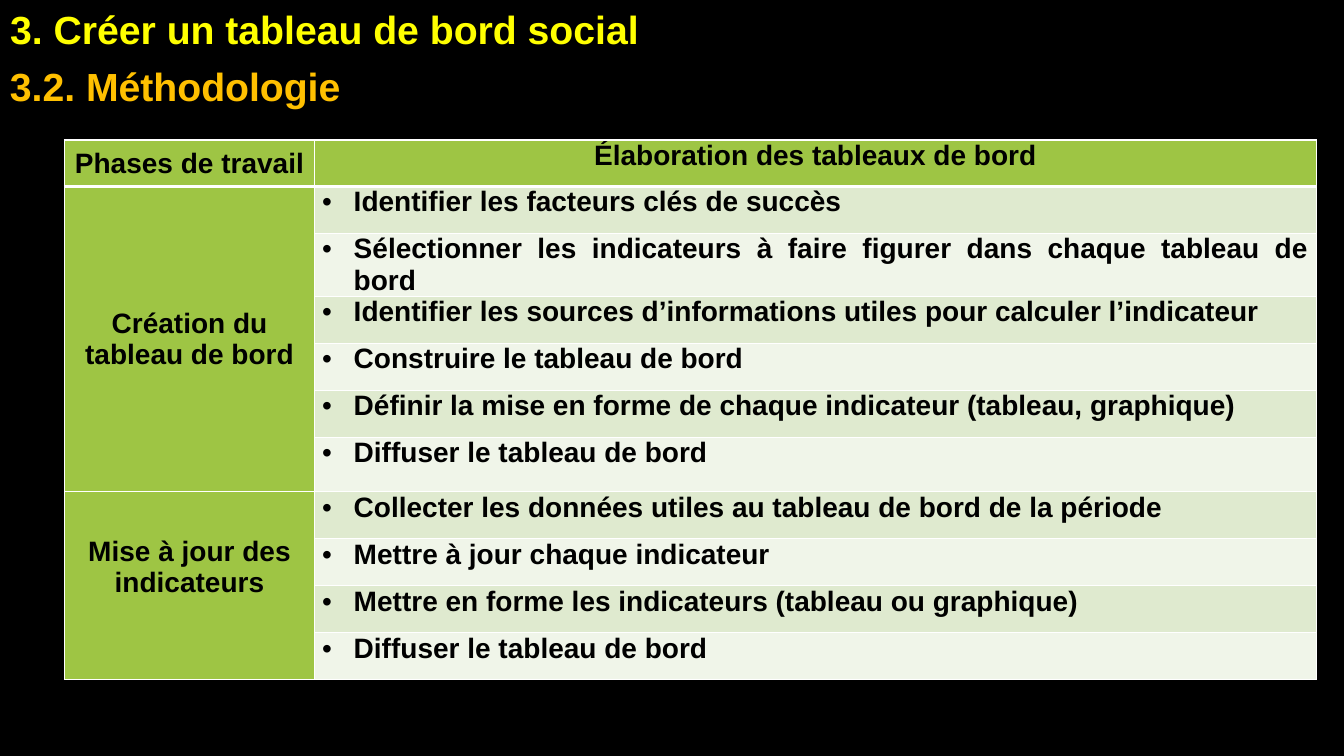
from lxml.etree import SubElement
from pptx import Presentation
from pptx.dml.color import RGBColor
from pptx.enum.text import MSO_ANCHOR as Anchor, MSO_AUTO_SIZE as AutoSize, PP_ALIGN as Align
from pptx.oxml.ns import qn
from pptx.util import Pt

BLACK, WHITE, YELLOW, ORANGE = "000000", "FFFFFF", "FFFF00", "FFC000"
GREEN, BANDS = "9EC544", ("DFEACF", "F0F5E9")
HEADINGS = ("Phases de travail", "Élaboration des tableaux de bord")
PHASES = (
    ("Création du tableau de bord", 0, (
        "Identifier les facteurs clés de succès",
        "Sélectionner les indicateurs à faire figurer dans chaque tableau de bord",
        "Identifier les sources d’informations utiles pour calculer l’indicateur",
        "Construire le tableau de bord",
        "Définir la mise en forme de chaque indicateur (tableau, graphique)",
        "Diffuser le tableau de bord",
    )),
    ("Mise à jour des indicateurs", 27, (
        "Collecter les données utiles au tableau de bord de la période",
        "Mettre à jour chaque indicateur",
        "Mettre en forme les indicateurs (tableau ou graphique)",
        "Diffuser le tableau de bord",
    )),
)


def paint(fill, color):
    fill.solid()
    fill.fore_color.rgb = RGBColor.from_string(color)


def write(frame, text, size=20, color=BLACK, align=Align.LEFT, spacing=0, bullet=False):
    frame.text = text
    line = frame.paragraphs[0]
    line.alignment = align
    line.space_before = line.space_after = Pt(spacing)
    font = line.runs[0].font
    font.name, font.size, font.bold = "Arial", Pt(size), True
    paint(font.fill, color)
    if bullet:
        properties = line._p.get_or_add_pPr()
        properties.set("marL", str(Pt(22.5)))
        properties.set("indent", str(Pt(-22.5)))
        SubElement(properties, qn("a:buFont"), typeface="Arial")
        SubElement(properties, qn("a:buChar"), char="•")


class Board:
    """Dark slide with headings and a green table of work phases."""

    def __init__(self, deck):
        self.slide = deck.slides.add_slide(deck.slide_layouts[5])
        paint(self.slide.background.fill, BLACK)

    def heading(self, shape, text, color, box):
        shape.left, shape.top, shape.width, shape.height = map(Pt, box)
        frame = shape.text_frame
        frame.word_wrap, frame.auto_size = True, AutoSize.NONE
        frame.vertical_anchor = Anchor.TOP
        write(frame, text, size=28, color=color)

    def title(self, text, box):
        self.heading(self.slide.shapes.title, text, YELLOW, box)

    def subtitle(self, text, box):
        self.heading(self.slide.shapes.add_textbox(0, 0, 0, 0), text, ORANGE, box)

    def table(self, left, top, widths, heights):
        grid = self.slide.shapes.add_table(
            len(heights), len(widths), Pt(left), Pt(top), Pt(sum(widths)), Pt(sum(heights))).table
        grid.first_row = grid.horz_banding = False
        for column, width in zip(grid.columns, widths):
            column.width = Pt(width)
        for row, height in zip(grid.rows, heights):
            row.height = Pt(height)
        return grid

    def cell(self, grid, row, column, text, fill, anchor=Anchor.TOP, bottom=0, **style):
        cell = grid.cell(row, column)
        cell.margin_left = cell.margin_right = Pt(5.4)
        cell.margin_top, cell.margin_bottom = 0, Pt(bottom)
        cell.vertical_anchor = anchor
        if text:
            write(cell.text_frame, text, **style)
        for side in "LRTB":
            thick = (row, side) in ((0, "B"), (1, "T"))
            border = SubElement(cell._tc.get_or_add_tcPr(), qn(f"a:ln{side}"),
                                w=str(Pt(3 if thick else 1)))
            SubElement(SubElement(border, qn("a:solidFill")), qn("a:srgbClr"), val=WHITE)
        paint(cell.fill, fill)


def main():
    deck = Presentation()
    deck.slide_width, deck.slide_height = Pt(960), Pt(540)
    board = Board(deck)
    board.title("3. Créer un tableau de bord social", (0, 0, 788, 78))

    heights = [33.3] + [33.6] * 5 + [39] + [33.6] * 4
    grid = board.table(46, 100, (178.8, 715.4), heights)
    for column, (heading, anchor) in enumerate(zip(HEADINGS, (Anchor.MIDDLE, Anchor.TOP))):
        board.cell(grid, 0, column, heading, GREEN, anchor, align=Align.CENTER, spacing=3)
    row = 1
    for phase, bottom, steps in PHASES:
        first = row
        for step in steps:
            board.cell(grid, row, 0, phase if row == first else "", GREEN, Anchor.MIDDLE,
                       bottom, align=Align.CENTER, spacing=2)
            board.cell(grid, row, 1, step, BANDS[(row - 1) % 2], align=Align.JUSTIFY, bullet=True)
            row += 1
        grid.cell(first, 0).merge(grid.cell(row - 1, 0))

    board.subtitle("3.2. Méthodologie", (0, 41, 254, 41))
    deck.save("out.pptx")


if __name__ == "__main__":
    main()
